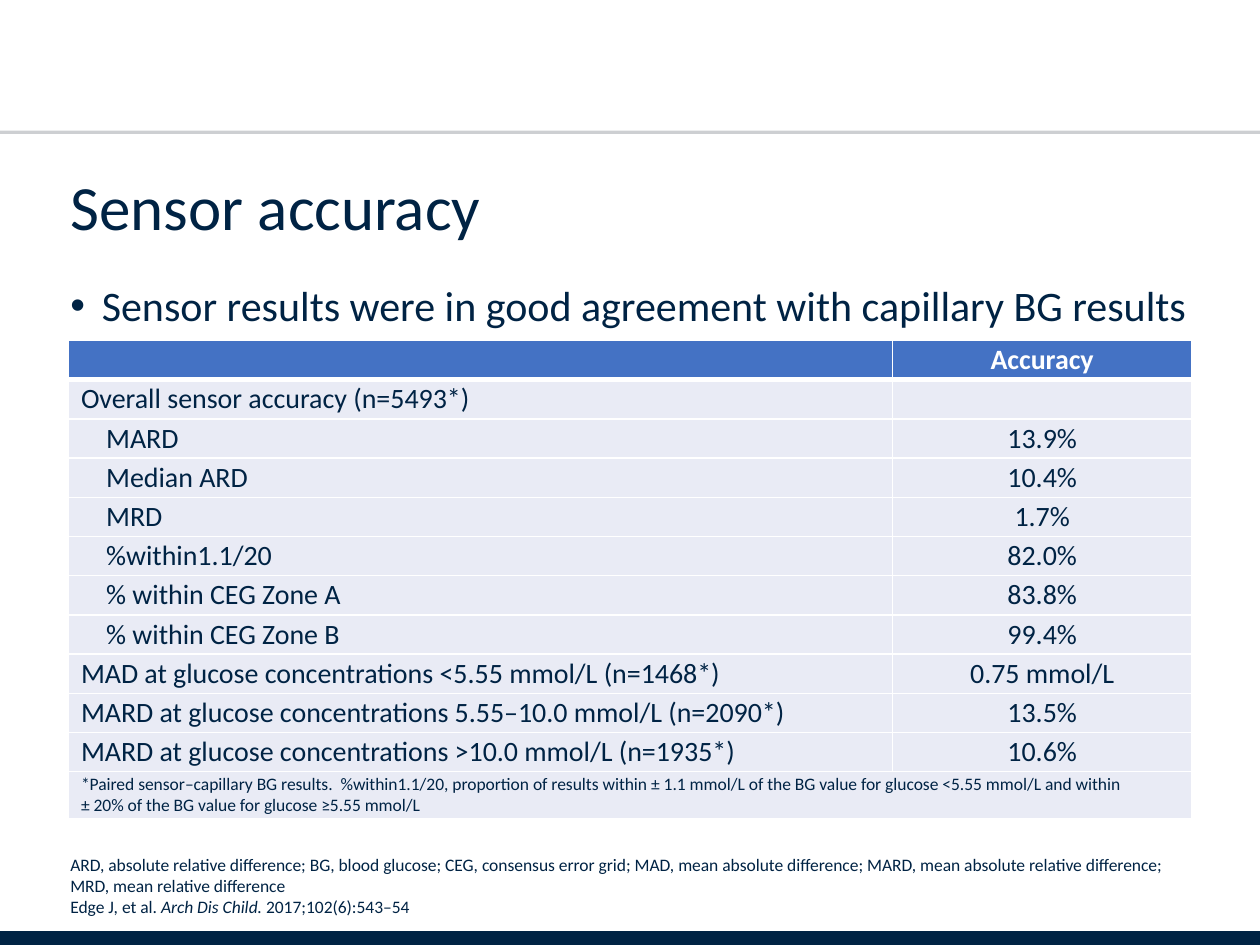
import pptx
import pptx.dml.color
import pptx.enum.shapes
import pptx.enum.text
import pptx.oxml
import pptx.oxml.ns
import pptx.util
from lxml import etree

Pt = pptx.util.Pt
qn = pptx.oxml.ns.qn
ALIGN = pptx.enum.text.PP_ALIGN
ANCHOR = pptx.enum.text.MSO_ANCHOR

RESULTS = [
    # label, accuracy, indent in points
    ("Overall sensor accuracy (n=5493*)", "", 0),
    ("MARD", "13.9%", 14.4),
    ("Median ARD", "10.4%", 14.4),
    ("MRD", "1.7%", 14.4),
    ("%within1.1/20", "82.0%", 14.4),
    ("% within CEG Zone A", "83.8%", 14.4),
    ("% within CEG Zone B", "99.4%", 14.4),
    ("MAD at glucose concentrations <5.55 mmol/L (n=1468*)", "0.75 mmol/L", 0),
    ("MARD at glucose concentrations 5.55–10.0 mmol/L (n=2090*)", "13.5%", 0),
    ("MARD at glucose concentrations >10.0 mmol/L (n=1935*)", "10.6%", 0),
]
TABLE_NOTE = (
    "*Paired sensor–capillary BG results.  %within1.1/20, proportion of results within "
    "± 1.1 mmol/L of the BG value for glucose <5.55 mmol/L and within \n"
    "± 20% of the BG value for glucose ≥5.55 mmol/L"
)
REFERENCES = [
    ("ARD, absolute relative difference; BG, blood glucose; CEG, consensus error grid; "
     "MAD, mean absolute difference; MARD, mean absolute relative difference; "
     "MRD, mean relative difference\nEdge J, et al. ", False),
    ("Arch Dis Child. ", True),
    ("2017;102(6):543–54", False),
]


def rgb(hex_string):
    return pptx.dml.color.RGBColor.from_string(hex_string)


def write(frame, text, size, color="002344", font="Calibri", bold=False, align=ALIGN.LEFT,
          anchor=None, indent=0, bullet=None, space_after=0, line_spacing=None):
    """Fill the first paragraph with a string or a list of (text, italic) parts."""
    frame.word_wrap = True
    if anchor is not None:
        frame.vertical_anchor = anchor
    paragraph = frame.paragraphs[0]
    paragraph.alignment = align
    paragraph.space_after = Pt(space_after)
    if line_spacing:
        paragraph.line_spacing = line_spacing
    properties = paragraph._p.get_or_add_pPr()
    properties.set("marL", str(Pt(indent)))
    properties.set("indent", str(-Pt(indent) if bullet else 0))
    if bullet:
        etree.SubElement(properties, qn("a:buFont"), typeface="Arial")
        etree.SubElement(properties, qn("a:buChar"), char=bullet)
    if not text:
        etree.SubElement(paragraph._p, qn("a:endParaRPr"), sz=str(size * 100))
        return
    parts = [(text, False)] if isinstance(text, str) else text
    for part, italic in parts:
        for number, line in enumerate(part.split("\n")):
            if number:
                paragraph.add_line_break()
            run = paragraph.add_run()
            run.text = line
            run.font.name, run.font.size = font, Pt(size)
            run.font.bold, run.font.italic = bold, italic
            run.font.color.rgb = rgb(color)


class SlideBuilder:
    ink, header, band, white = "002344", "4472C4", "E9EBF5", "FFFFFF"
    left, width = 33.12, 657.36

    def __init__(self, presentation):
        self.slide = presentation.slides.add_slide(presentation.slide_layouts[5])
        self.slide.background.fill.solid()
        self.slide.background.fill.fore_color.rgb = rgb(self.white)

    def rule(self, y, color, weight, opacity=100):
        line = self.slide.shapes.add_connector(
            pptx.enum.shapes.MSO_CONNECTOR.STRAIGHT, 0, Pt(y), Pt(720), Pt(y))
        line.line.color.rgb = rgb(color)
        line.line.width = Pt(weight)
        properties = line._element.spPr
        if opacity < 100:
            fill = properties.find(".//" + qn("a:srgbClr"))
            etree.SubElement(fill, qn("a:alpha"), val=str(opacity * 1000))
        etree.SubElement(properties, qn("a:effectLst"))

    def title(self, text, top, height):
        title = self.slide.shapes.title
        title.left, title.top = Pt(self.left), Pt(top)
        title.width, title.height = Pt(self.width), Pt(height)
        title.text_frame.auto_size = pptx.enum.text.MSO_AUTO_SIZE.NONE
        write(title.text_frame, text, 36, self.ink, anchor=ANCHOR.BOTTOM, line_spacing=0.9)

    def text(self, text, top, height, size, **text_format):
        box = self.slide.shapes.add_textbox(Pt(self.left), Pt(top), Pt(self.width), Pt(height))
        write(box.text_frame, text, size, self.ink, **text_format)

    def cell(self, cell, text, size, fill, top_border=1, bottom_border=1, **text_format):
        cell.margin_left = cell.margin_right = Pt(7.2)
        cell.margin_top = cell.margin_bottom = Pt(1.44)
        properties = cell._tc.get_or_add_tcPr()
        borders = {"lnL": 1, "lnR": 1, "lnT": top_border, "lnB": bottom_border}
        for side, weight in borders.items():
            border = etree.SubElement(properties, qn("a:" + side), w=str(Pt(weight)))
            solid = etree.SubElement(border, qn("a:solidFill"))
            etree.SubElement(solid, qn("a:srgbClr"), val=self.white)
        cell.fill.solid()
        cell.fill.fore_color.rgb = rgb(fill)
        write(cell.text_frame, text, size, **text_format)

    def accuracy_table(self, left, top, column_widths, row_height, note_height):
        last = len(RESULTS) + 1
        height = row_height * last + note_height
        table = self.slide.shapes.add_table(
            last + 1, 2, Pt(left), Pt(top), Pt(sum(column_widths)), Pt(height)).table
        table.horz_banding = False
        for column, width in zip(table.columns, column_widths):
            column.width = Pt(width)
        for row in table.rows:
            row.height = Pt(row_height)
        table.rows[last].height = Pt(note_height)

        for column, heading in enumerate(("", "Accuracy")):
            self.cell(table.cell(0, column), heading, 16, self.header, bottom_border=3,
                      color=self.white, bold=True, align=ALIGN.CENTER)
        for row, (label, accuracy, indent) in enumerate(RESULTS, start=1):
            top_border = 3 if row == 1 else 1
            self.cell(table.cell(row, 0), label, 16, self.band, top_border, indent=indent)
            self.cell(table.cell(row, 1), accuracy, 16, self.band, top_border,
                      align=ALIGN.CENTER)
        table.cell(last, 0).merge(table.cell(last, 1))
        for column, note in enumerate((TABLE_NOTE, "")):
            self.cell(table.cell(last, column), note, 10, self.band)


def main():
    presentation = pptx.Presentation()
    presentation.slide_width, presentation.slide_height = Pt(720), Pt(540)
    builder = SlideBuilder(presentation)
    builder.rule(537.12, builder.ink, 10)
    builder.rule(75.6, "9DA1A6", 1.75, opacity=50)
    builder.title("Sensor accuracy", top=90, height=53.28)
    builder.text("Sensor results were in good agreement with capillary BG results",
                 top=156.24, height=342.72, size=24, indent=18, bullet="•", space_after=6)
    builder.text(REFERENCES, top=506.16, height=21.6, size=10,
                 anchor=ANCHOR.BOTTOM, space_after=6)
    builder.accuracy_table(left=39.1, top=194.6, column_widths=(470.9, 171.1),
                           row_height=22.4, note_height=27)
    presentation.save("out.pptx")


if __name__ == "__main__":
    main()
